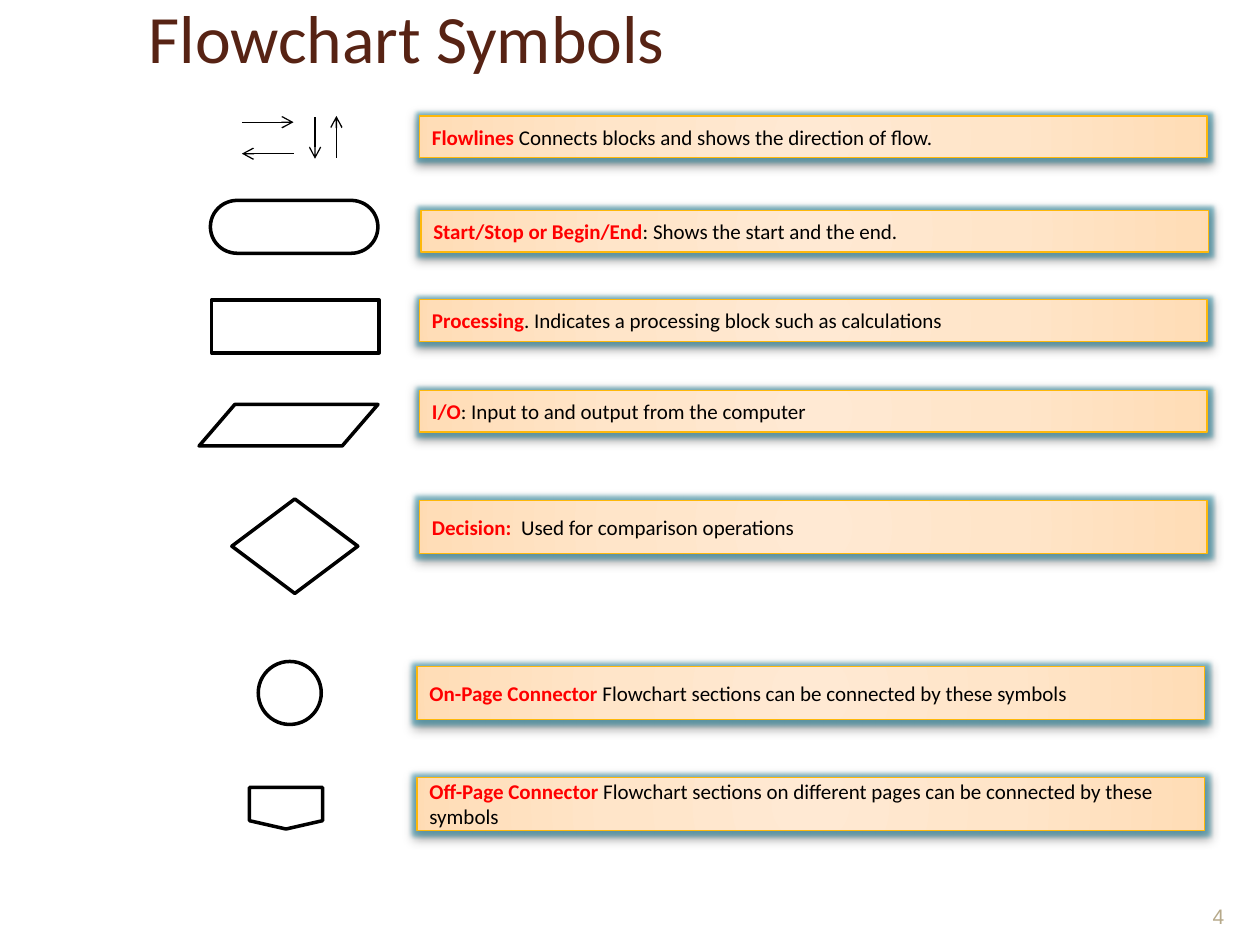
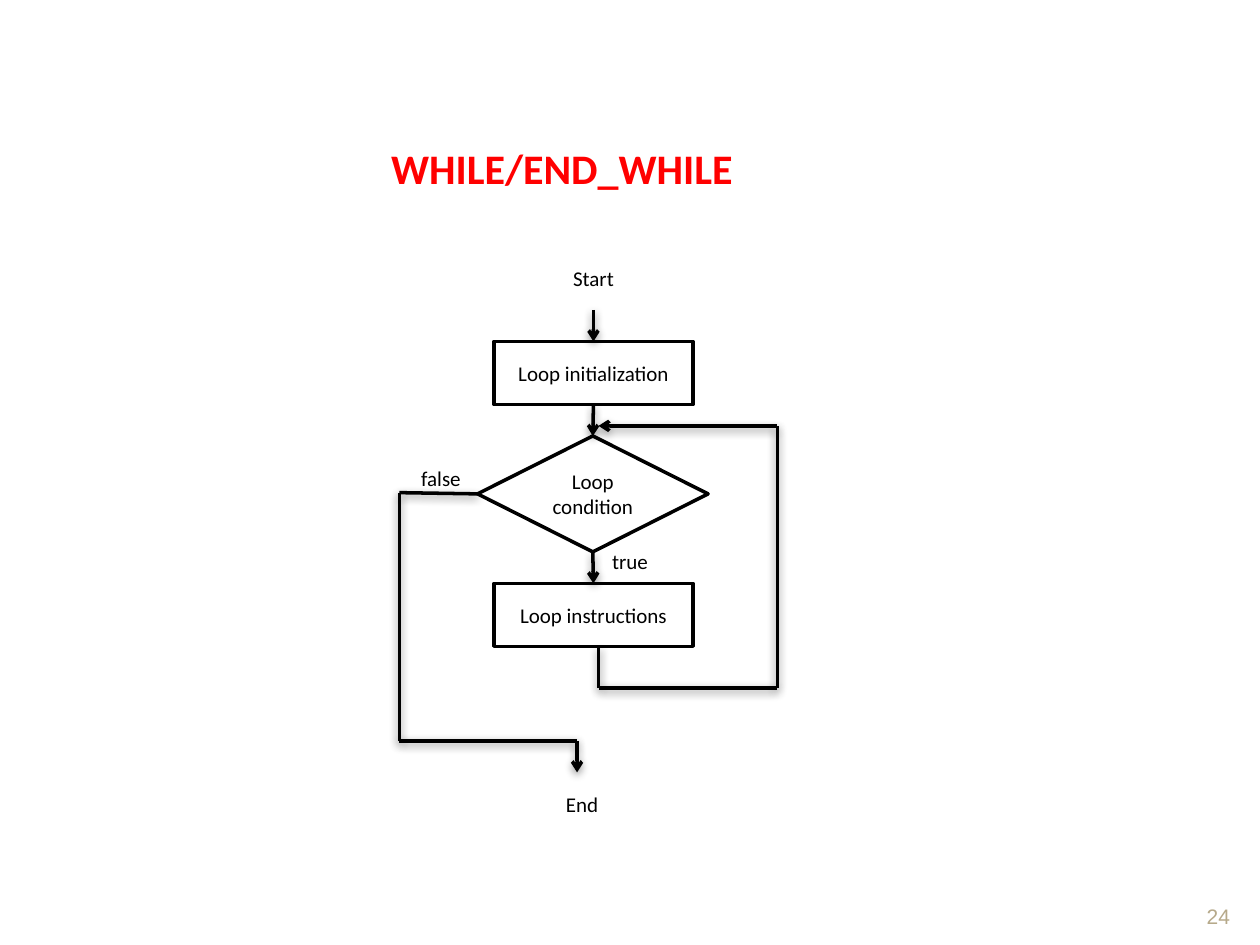
from pptx import Presentation
from pptx.dml.color import RGBColor
from pptx.enum.shapes import MSO_CONNECTOR, MSO_SHAPE as Shape
from pptx.enum.text import MSO_ANCHOR as Anchor, MSO_AUTO_SIZE, PP_ALIGN as Align
from pptx.oxml import parse_xml
from pptx.oxml.ns import nsdecls
from pptx.util import Inches, Pt

BLACK, WHITE, RED = "000000", "FFFFFF", "FF0000"
TITLE_BROWN, NUMBER_TAN, BOX_BORDER = "572314", "B6A98A", "FEB80A"
SHADOW = ('<a:outerShdw blurRad="63500" dist="25400" dir="5400000" rotWithShape="0">'
          '<a:srgbClr val="000000"><a:alpha val="43000"/></a:srgbClr></a:outerShdw>')
GLOW = '<a:glow rad="63500"><a:srgbClr val="3891A7"><a:alpha val="60000"/></a:srgbClr></a:glow>'
GRADIENT_STOPS = [(0, "FFE9D3"), (50, "FFE5C9"), (97, "FFDDB7"), (100, "FFDBB2")]


def write(shape, text, lead="", size=12, font="Calibri", color=BLACK, bold=False,
          align=Align.CENTER, anchor=Anchor.MIDDLE):
    """Fill a shape with one paragraph; lead is a bold red opening."""
    frame = shape.text_frame
    frame.word_wrap = True
    frame.auto_size = MSO_AUTO_SIZE.NONE
    frame.vertical_anchor = anchor
    paragraph = frame.paragraphs[0]
    paragraph.alignment = align
    for words, run_color, run_bold in [(lead, RED, True), (text, color, bold)]:
        if words:
            run = paragraph.add_run()
            run.text = words
            run.font.name, run.font.size, run.font.bold = font, Pt(size), run_bold
            run.font.color.rgb = RGBColor.from_string(run_color)


def draw_line(slide, start, end, arrow=False, width=2, effects=SHADOW):
    line = slide.shapes.add_connector(
        MSO_CONNECTOR.STRAIGHT, *[Inches(value) for value in (*start, *end)])
    line.line.width = Pt(width)
    line.line.color.rgb = RGBColor.from_string(BLACK)
    if arrow:
        line.line._get_or_add_ln().append(
            parse_xml(f'<a:tailEnd {nsdecls("a")} type="arrow"/>'))
    line._element.spPr.append(
        parse_xml(f'<a:effectLst {nsdecls("a")}>{effects}</a:effectLst>'))
    return line


presentation = Presentation()
presentation.slide_width, presentation.slide_height = Inches(10), Inches(7.5)
title_only = presentation.slide_layouts[5]

# Titles and slide numbers
slides = []
for title, number, place, style in [
    ("Flowchart Symbols", "4", (1.08, 0, 8.69, 0.58),
     {"size": 38.7, "color": TITLE_BROWN, "align": Align.LEFT}),
    ("WHILE/END_WHILE", "24", (2.25, 0.83, 4.42, 1),
     {"size": 24, "color": RED, "bold": True}),
]:
    slide = presentation.slides.add_slide(title_only)
    heading = slide.shapes.title
    heading.left, heading.top, heading.width, heading.height = map(Inches, place)
    write(heading, title, **style)
    number_box = slide.shapes.add_textbox(*map(Inches, (9.42, 6.9, 0.5, 0.52)))
    write(number_box, number, font="Arial", color=NUMBER_TAN, anchor=Anchor.BOTTOM)
    slides.append(slide)
symbols_slide, loop_slide = slides

# Outlined flowchart shapes on both slides
nodes = {}
for slide, kind, place, label in [
    (symbols_slide, Shape.FLOWCHART_TERMINATOR, (1.67, 1.59, 1.33, 0.42), ""),
    (symbols_slide, Shape.FLOWCHART_PROCESS, (1.68, 2.38, 1.33, 0.42), ""),
    (symbols_slide, Shape.FLOWCHART_DATA, (1.58, 3.21, 1.42, 0.33), ""),
    (symbols_slide, Shape.FLOWCHART_DECISION, (1.84, 3.96, 1, 0.75), ""),
    (symbols_slide, Shape.FLOWCHART_CONNECTOR, (2.05, 5.25, 0.5, 0.5), ""),
    (symbols_slide, Shape.FLOWCHART_OFFPAGE_CONNECTOR, (1.98, 6.25, 0.58, 0.33), ""),
    (loop_slide, Shape.FLOWCHART_PROCESS, (3.92, 1.96, 1.58, 0.5), "Start"),
    (loop_slide, Shape.FLOWCHART_PROCESS, (3.92, 2.71, 1.58, 0.5), "Loop initialization"),
    (loop_slide, Shape.FLOWCHART_DECISION, (3.79, 3.46, 1.83, 0.92), "Loop condition"),
    (loop_slide, Shape.FLOWCHART_PROCESS, (3.92, 4.63, 1.58, 0.5), "Loop instructions"),
    (loop_slide, Shape.FLOWCHART_PROCESS, (3.83, 6.13, 1.58, 0.5), "End"),
]:
    node = slide.shapes.add_shape(kind, *map(Inches, place))
    node.shadow.inherit = False
    if label in ("Start", "End"):
        node.fill.background()
        node.line.fill.background()
    else:
        node.fill.solid()
        node.fill.fore_color.rgb = RGBColor.from_string(WHITE)
        node.line.color.rgb = RGBColor.from_string(BLACK)
        node.line.width = Pt(2)
    if label:
        write(node, label)
        nodes[label] = node

# Slide 1: flowlines and descriptions
for start, end in [((1.92, 0.97), (2.33, 0.97)), ((2.5, 0.93), (2.5, 1.26)),
                   ((2.33, 1.22), (1.92, 1.22)), ((2.67, 1.25), (2.67, 0.92))]:
    draw_line(symbols_slide, start, end, arrow=True, width=0.75, effects="")

stops = "".join(f'<a:gs pos="{position * 1000}"><a:srgbClr val="{color}"/></a:gs>'
                for position, color in GRADIENT_STOPS)
for left, top, height, name, meaning in [
    (3.33, 0.92, 0.33, "Flowlines", " Connects blocks and shows the direction of flow."),
    (3.34, 1.67, 0.33, "Start/Stop or Begin/End", ": Shows the start and the end."),
    (3.33, 2.38, 0.33, "Processing", ". Indicates a processing block such as calculations"),
    (3.33, 3.1, 0.33, "I/O", ": Input to and output from the computer"),
    (3.33, 3.97, 0.42, "Decision:  ", "Used for comparison operations"),
    (3.31, 5.29, 0.42, "On-Page Connector ",
     "Flowchart sections can be connected by these symbols"),
    (3.31, 6.17, 0.42, "Off-Page Connector",
     " Flowchart sections on different pages can be connected by these symbols"),
]:
    box = symbols_slide.shapes.add_shape(
        Shape.FLOWCHART_PROCESS, *map(Inches, (left, top, 6.25, height)))
    box.line.color.rgb = RGBColor.from_string(BOX_BORDER)
    box.line.width = Pt(0.75)
    properties = box._element.spPr
    properties.insert(2, parse_xml(
        f'<a:gradFill {nsdecls("a")} rotWithShape="1"><a:gsLst>{stops}</a:gsLst>'
        '<a:path path="circle"><a:fillToRect l="50000" t="50000" r="50000" b="50000"/>'
        '</a:path></a:gradFill>'))
    properties.append(parse_xml(
        f'<a:effectLst {nsdecls("a")}>{GLOW}{SHADOW}</a:effectLst>'))
    write(box, meaning, lead=name, align=Align.LEFT)

# Slide 2: steps down the middle
steps = ["Start", "Loop initialization", "Loop condition", "Loop instructions"]
for upper, lower in zip(steps, steps[1:]):
    step = draw_line(loop_slide, (4.71, 0), (4.71, 1), arrow=True)
    step.begin_connect(nodes[upper], 2)
    step.end_connect(nodes[lower], 0)

# Loop back to the condition, then the way out
back = [(4.75, 5.13), (4.75, 5.46), (6.17, 5.46), (6.17, 3.38), (4.75, 3.38)]
way_out = [(3.79, 3.91), (3.17, 3.91), (3.17, 5.88), (4.58, 5.88), (4.58, 6.13)]
for route in (back, way_out):
    for start, end in zip(route, route[1:]):
        segment = draw_line(loop_slide, start, end, arrow=end == route[-1])
        if start == way_out[0]:
            segment.begin_connect(nodes["Loop condition"], 1)
            segment.end_x, segment.end_y = map(Inches, end)

for answer, left, top in [("true", 4.5, 4.29), ("false", 3, 3.63)]:
    write(loop_slide.shapes.add_textbox(*map(Inches, (left, top, 1, 0.33))), answer)

presentation.save("out.pptx")
